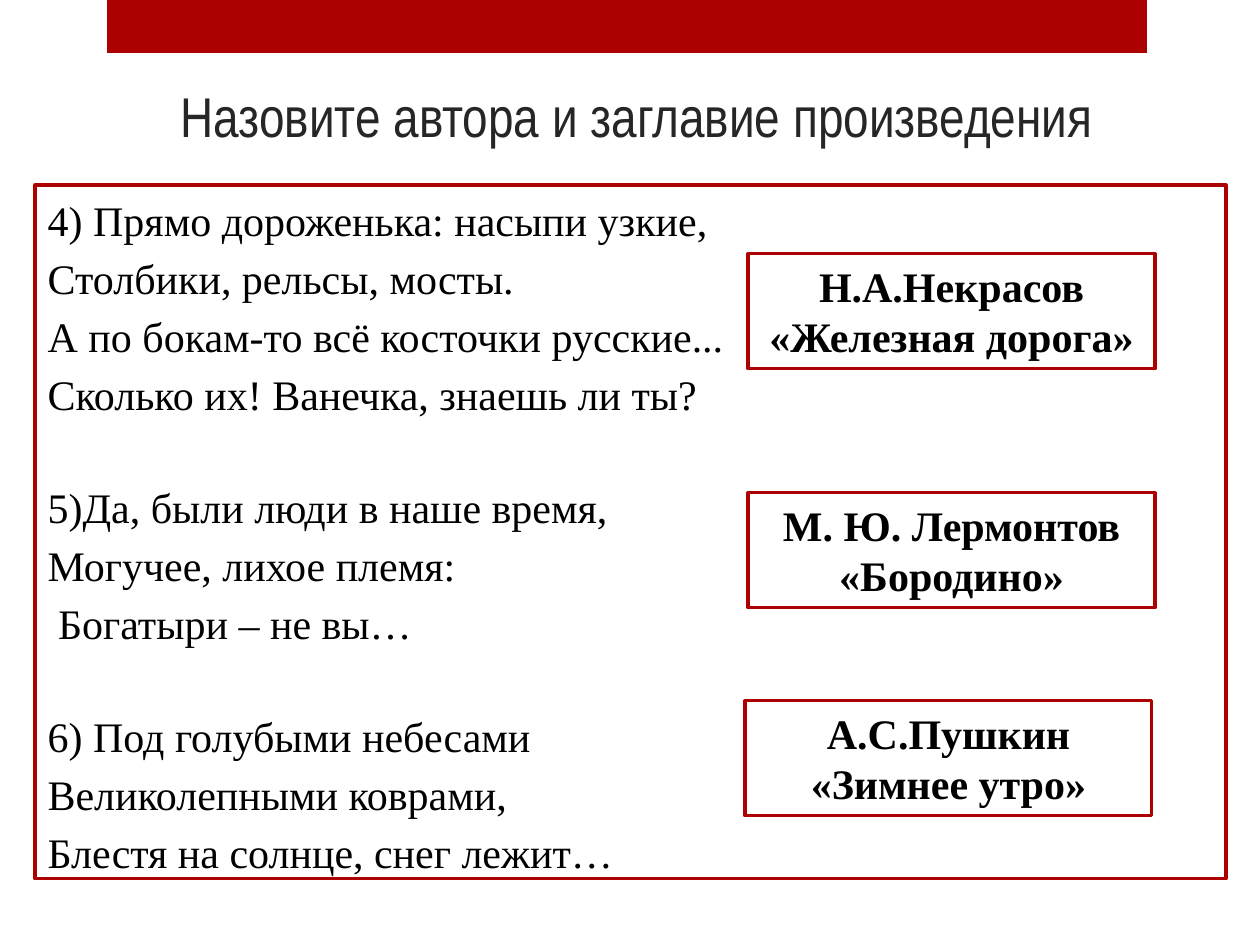
from pptx import Presentation
from pptx.dml.color import RGBColor
from pptx.enum.shapes import MSO_SHAPE
from pptx.enum.text import MSO_ANCHOR, MSO_AUTO_SIZE, PP_ALIGN
from pptx.oxml import parse_xml
from pptx.oxml.ns import nsdecls
from pptx.util import Emu, Pt

EMU_PER_PX = 914400 / 126
RED, WHITE, BLACK, GRAY = "AD0101", "FFFFFF", "000000", "262626"
SERIF = "Times New Roman"
TITLE = "Назовите автора и заглавие произведения"
STANZAS = [
    ["4) Прямо дороженька: насыпи узкие,", "Столбики, рельсы, мосты.",
     "А по бокам-то всё косточки русские...", "Сколько их! Ванечка, знаешь ли ты?"],
    ["5)Да, были люди в наше время,", "Могучее, лихое племя:", " Богатыри – не вы…"],
    ["6) Под голубыми небесами\vВеликолепными коврами,\vБлестя на солнце, снег лежит…"],
]
ANSWERS = [
    (748, 493, ["М. Ю. Лермонтов «Бородино»"]),
    (748, 254, ["Н.А.Некрасов «Железная дорога»"]),
    (745, 701, ["А.С.Пушкин", "«Зимнее утро»"]),
]


def px(length):
    """Turn pixels into EMU."""
    return Emu(round(length * EMU_PER_PX))


def color(value):
    """Turn a hex string into a colour."""
    return RGBColor.from_string(value)


def place(shape, left, top, width, height):
    """Move and size a shape in pixels."""
    shape.left, shape.top = px(left), px(top)
    shape.width, shape.height = px(width), px(height)


def paint(shape, fill, line=None):
    """Set the fill and the outline of a shape."""
    shape.fill.solid()
    shape.fill.fore_color.rgb = color(fill)
    if line:
        shape.line.color.rgb = color(line)
        shape.line.width = Pt(1.75)
    else:
        shape.line.fill.background()


def write(para, text, font=SERIF, size=24, ink=BLACK, bold=False,
          align=PP_ALIGN.CENTER, spacing=1.0, before=0):
    """Put formatted text into a paragraph."""
    para.text = text
    para.alignment = align
    para.line_spacing = spacing
    para.space_before = Pt(before)
    para.space_after = Pt(0)
    for span in para.runs:
        span.font.name, span.font.size, span.font.bold = font, Pt(size), bold
        span.font.color.rgb = color(ink)


def next_para(frame):
    """Return the first paragraph if it is empty, else a new one."""
    first = frame.paragraphs[0]
    return frame.add_paragraph() if first.text else first


def remove_bullet(para):
    """Take the bullet and the indent off a paragraph."""
    properties = para._p.get_or_add_pPr()
    properties.set("marL", "0")
    properties.set("indent", "0")
    properties.append(parse_xml(f"<a:buNone {nsdecls('a')}/>"))


def add_rectangle(page, left, top, width, height, fill, line=None):
    """Add a flat rectangle."""
    box = page.shapes.add_shape(MSO_SHAPE.RECTANGLE, 0, 0, 0, 0)
    place(box, left, top, width, height)
    paint(box, fill, line)
    box.shadow.inherit = False
    return box


def fill_title(page):
    """Move the title and write it."""
    title = page.shapes.title
    place(title, 74, 55, 1126, 100)
    frame = title.text_frame
    frame.auto_size = MSO_AUTO_SIZE.NONE
    frame.vertical_anchor = MSO_ANCHOR.BOTTOM
    write(frame.paragraphs[0], TITLE, font="Arial Narrow", size=32, ink=GRAY)


def fill_verses(page):
    """Frame the body and write the stanzas with a line of space between."""
    body = page.placeholders[1]
    place(body, 35, 185, 1191, 694)
    paint(body, WHITE, RED)
    frame = body.text_frame
    frame.auto_size = MSO_AUTO_SIZE.NONE
    frame.vertical_anchor = MSO_ANCHOR.MIDDLE
    for number, stanza in enumerate(STANZAS):
        for row, verse in enumerate(stanza):
            para = next_para(frame)
            align = PP_ALIGN.LEFT if "\v" in verse else PP_ALIGN.JUSTIFY
            write(para, verse, align=align, spacing=1.15,
                  before=31.7 if number and not row else 0)
            remove_bullet(para)


def add_answer(page, left, top, lines):
    """Add a framed box with an author and a work."""
    box = add_rectangle(page, left, top, 407, 115, WHITE, RED)
    frame = box.text_frame
    frame.word_wrap = True
    frame.auto_size = MSO_AUTO_SIZE.SHAPE_TO_FIT_TEXT
    frame.vertical_anchor = MSO_ANCHOR.TOP
    for line in lines:
        write(next_para(frame), line, bold=True)


def main():
    """Build the slide and save it."""
    deck = Presentation()
    deck.slide_width, deck.slide_height = px(1260), px(945)
    page = deck.slides.add_slide(deck.slide_layouts[1])
    add_rectangle(page, 107, 0, 1040, 53, RED)
    fill_title(page)
    fill_verses(page)
    for left, top, lines in ANSWERS:
        add_answer(page, left, top, lines)
    deck.save("out.pptx")


if __name__ == "__main__":
    main()
